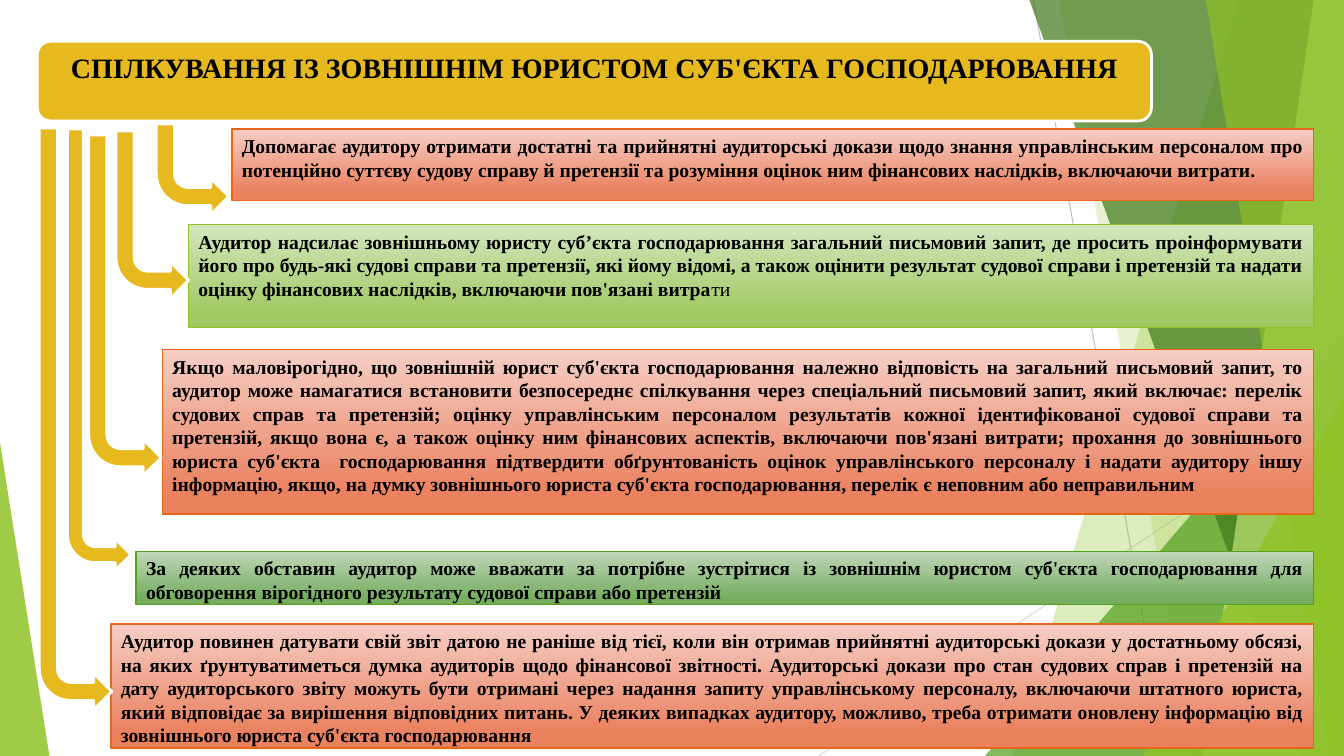
from pptx import Presentation
from pptx.dml.color import RGBColor
from pptx.enum.shapes import MSO_CONNECTOR, MSO_SHAPE
from pptx.enum.text import MSO_ANCHOR, PP_ALIGN
from pptx.util import Inches, Pt
from lxml.etree import SubElement
from pptx.oxml.ns import qn

theme = {
    "font": "Times New Roman", "title": 20, "body": 14,
    "ink": "000000", "gold": "E6B91E", "white": "FFFFFF",
    "lime": "90C226", "green": "54A021", "moss": "3F7819", "pale": "C0E474",
    "coral": ("F5CEC5", "EA815F", "E76618"),
    "grass": ("D3E5BE", "A0C962", "90C226"),
    "leaf": ("C0D6B9", "76AD61", "54A021"),
}

deck = Presentation()
deck.slide_width, deck.slide_height = Inches(13.33), Inches(7.5)
slide = deck.slides.add_slide(deck.slide_layouts[6])
shapes = slide.shapes
cols, rows = 1333, 750
col, row = deck.slide_width // cols, deck.slide_height // rows


def paint(shape, fill, edge=None, width=1, alpha=None):
    shape.shadow.inherit = False
    shape.fill.solid()
    shape.fill.fore_color.rgb = RGBColor.from_string(fill)
    if alpha:
        tint = shape.fill._xPr.find(qn("a:solidFill"))[0]
        SubElement(tint, qn("a:alpha")).set("val", str(alpha * 1000))
    if edge:
        shape.line.color.rgb = RGBColor.from_string(edge)
        shape.line.width = Pt(width)
    else:
        shape.line.fill.background()


def write(shape, size, align, parts):
    frame = shape.text_frame
    frame.word_wrap = True
    frame.vertical_anchor = MSO_ANCHOR.TOP
    para = frame.paragraphs[0]
    para.alignment = align
    for text, bold in parts:
        run = para.add_run()
        run.text = text
        run.font.name = theme["font"]
        run.font.size = Pt(size)
        run.font.bold = bold
        run.font.color.rgb = RGBColor.from_string(theme["ink"])


for x1, y1, x2, y2, shade in [
    (1025, 0, 1158, rows, "BFBFBF"),
    (cols, 403, 812, rows, "D9D9D9"),
]:
    ray = shapes.add_connector(
        MSO_CONNECTOR.STRAIGHT, x1 * col, y1 * row, x2 * col, y2 * row)
    ray.line.color.rgb = RGBColor.from_string(shade)
    ray.line.width = Pt(0.75)
    SubElement(ray._element.spPr, qn("a:effectLst"))

facets = [
    ("band", 1228, 1004, "lime", 30),
    ("band", 1050, 1183, "lime", 20),
    ("peak", 977, 333, "green", 72),
    ("band", 1021, 1291, "moss", 70),
    ("band", 1303, 1192, "pale", 70),
    ("band", 1196, 1318, "lime", 65),
    ("peak", 1134, 393, "lime", 80),
]
for kind, a, b, hue, alpha in facets:
    if kind == "band":
        path = shapes.build_freeform(a, 0, scale=col)
        path.add_line_segments([(cols, 0), (cols, rows), (b, rows)], close=True)
        facet = path.convert_to_shape()
    else:
        facet = shapes.add_shape(
            MSO_SHAPE.ISOSCELES_TRIANGLE,
            a * col, b * row, (cols - a) * col, (rows - b) * row)
        facet.adjustments[0] = 1
    paint(facet, theme[hue], alpha=alpha)

wedge = shapes.add_shape(
    MSO_SHAPE.ISOSCELES_TRIANGLE, 0, 439 * row, 49 * col, 311 * row)
wedge.adjustments[0] = 0
paint(wedge, theme["lime"], alpha=85)

right = 1303
boxes = [
    (110, 619, 123, "coral", [("Аудитор повинен датувати свій звіт датою не раніше від тієї, коли він отримав прийнятні аудиторські докази у достатньому обсязі, на яких ґрунтуватиметься думка аудиторів щодо фінансової звітності. Аудиторські докази про стан судових справ і претензій на дату аудиторського звіту можуть бути отримані через надання запиту управлінському персоналу, включаючи штатного юриста, який відповідає за вирішення відповідних питань. У деяких випадках аудитору, можливо, треба отримати оновлену інформацію від зовнішнього юриста суб'єкта господарювання", True)]),
    (187, 223, 102, "grass", [("Аудитор надсилає зовнішньому юристу суб’єкта господарювання загальний письмовий запит, де просить проінформувати його про будь-які судові справи та претензії, які йому відомі, а також оцінити результат судової справи і претензій та надати оцінку фінансових наслідків, включаючи пов'язані витра", True), ("ти", False)]),
    (161, 347, 163, "coral", [("Якщо маловірогідно, що зовнішній юрист суб'єкта господарювання належно відповість на загальний письмовий запит, то аудитор може намагатися встановити безпосереднє спілкування через спеціальний письмовий запит, який включає: перелік судових справ та претензій; оцінку управлінським персоналом результатів кожної ідентифікованої судової справи та претензій, якщо вона є, а також оцінку ним фінансових аспектів, включаючи пов'язані витрати; прохання до зовнішнього юриста суб'єкта  господарювання підтвердити обґрунтованість оцінок управлінського персоналу і надати аудитору іншу інформацію, якщо, на думку зовнішнього юриста суб'єкта господарювання, перелік є неповним або неправильним", True)]),
    (135, 547, 53, "leaf", [("За деяких обставин аудитор може вважати за потрібне зустрітися із зовнішнім юристом суб'єкта господарювання для обговорення вірогідного результату судової справи або претензій", True)]),
    (230, 128, 71, "coral", [("Допомагає аудитору отримати достатні та прийнятні аудиторські докази щодо знання управлінським персоналом про потенційно суттєву судову справу й претензії та розуміння оцінок ним фінансових наслідків, включаючи витрати.", True)]),
]
for left, top, high, hue, parts in boxes:
    box = shapes.add_shape(
        MSO_SHAPE.FLOWCHART_PROCESS,
        left * col, top * row, (right - left) * col, high * row)
    light, deep, edge = theme[hue]
    paint(box, light, edge)
    box.fill.gradient()
    box.fill.gradient_angle = 270
    for stop, shade, place in zip(box.fill.gradient_stops, (light, deep), (0, 0.88)):
        stop.color.rgb = RGBColor.from_string(shade)
        stop.position = place
    write(box, theme["body"], PP_ALIGN.JUSTIFY, parts)

title = shapes.add_shape(
    MSO_SHAPE.ROUNDED_RECTANGLE, 37 * col, 41 * row, 1105 * col, 79 * row)
paint(title, theme["gold"], theme["white"], 2)
write(title, theme["title"], PP_ALIGN.CENTER,
      [("СПІЛКУВАННЯ ІЗ ЗОВНІШНІМ ЮРИСТОМ СУБ'ЄКТА ГОСПОДАРЮВАННЯ", True)])

for left, top, wide, high in [
    (39, 127, 72, 577),
    (67, 128, 63, 438),
    (88, 134, 72, 338),
    (115, 130, 72, 166),
    (155, 123, 72, 90),
]:
    arrow = shapes.add_shape(
        MSO_SHAPE.BENT_ARROW, left * col, top * row, wide * col, high * row)
    arrow.rotation = 180
    arrow._element.spPr.xfrm.set("flipH", "1")
    paint(arrow, theme["gold"], theme["white"], 2)

deck.save("out.pptx")
